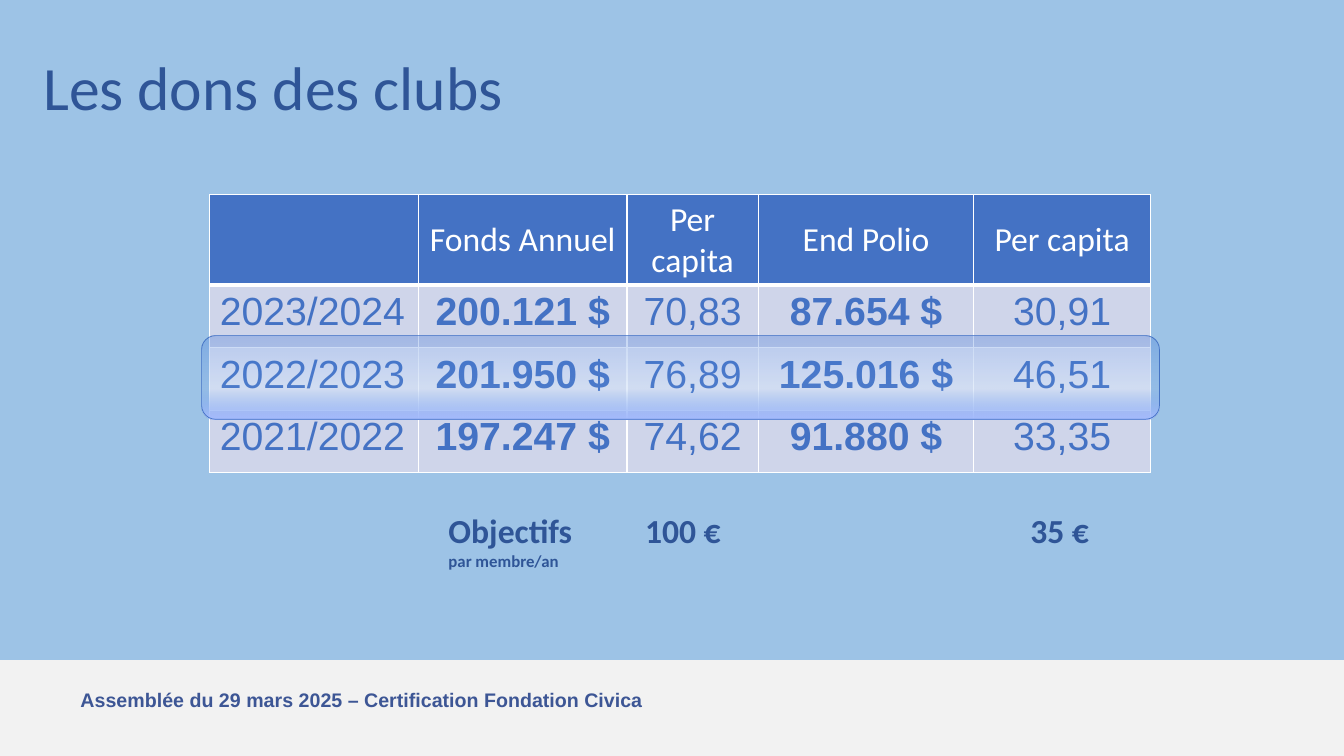
from lxml.etree import SubElement
from pptx import Presentation
from pptx.dml.color import RGBColor
from pptx.enum.shapes import MSO_SHAPE
from pptx.enum.text import MSO_ANCHOR, PP_ALIGN
from pptx.oxml.ns import qn
from pptx.util import Inches, Pt

SKY = RGBColor(0x9D, 0xC3, 0xE6)
PALE_GREY = RGBColor(0xF2, 0xF2, 0xF2)
FOOTER_BLUE = RGBColor(0x3D, 0x56, 0x95)
NAVY = RGBColor(0x2F, 0x55, 0x97)
BLUE = RGBColor(0x44, 0x72, 0xC4)
WHITE = RGBColor(0xFF, 0xFF, 0xFF)
BAND_DARK = RGBColor(0xCF, 0xD5, 0xEA)
BAND_LIGHT = RGBColor(0xE9, 0xEB, 0xF5)
GLASS_TOP = RGBColor(0x31, 0x6D, 0xD7)
GLASS_MIDDLE = RGBColor(0x70, 0xA2, 0xE8)
GLASS_BOTTOM = RGBColor(0xA6, 0xBB, 0xFF)

COLUMN_WIDTHS = [2.07, 2.07, 1.3, 2.14, 1.75]
ROW_HEIGHTS = [0.9, 0.62, 0.62, 0.62]
DONATIONS = [
    ["", "Fonds Annuel", "Per capita", "End Polio", "Per capita"],
    ["2023/2024", "200.121 $", "70,83", "87.654 $", "30,91"],
    ["2022/2023", "201.950 $", "76,89", "125.016 $", "46,51"],
    ["2021/2022", "197.247 $", "74,62", "91.880 $", "33,35"],
]


def add_run(paragraph, text, size, color, font="Calibri", bold=False):
    run = paragraph.add_run()
    run.text = text
    run.font.size = Pt(size)
    run.font.name = font
    run.font.bold = bold
    run.font.color.rgb = color


def add_label(slide, box, lines, color=NAVY, font="Calibri", bold=True):
    frame = slide.shapes.add_textbox(*map(Inches, box)).text_frame
    frame.word_wrap = True
    for index, (text, size) in enumerate(lines):
        paragraph = frame.add_paragraph() if index else frame.paragraphs[0]
        add_run(paragraph, text, size, color, font, bold)


def add_footer_band(slide):
    band = slide.shapes.add_shape(
        MSO_SHAPE.RECTANGLE, Inches(0), Inches(6.55), Inches(13.33), Inches(0.95))
    band.shadow.inherit = False
    band.fill.solid()
    band.fill.fore_color.rgb = PALE_GREY
    band.line.fill.background()


def set_borders(cell, bottom_width):
    properties = cell._tc.get_or_add_tcPr()
    for side, width in (("L", 1), ("R", 1), ("T", 1), ("B", bottom_width)):
        border = SubElement(properties, qn(f"a:ln{side}"), w=str(Pt(width)))
        fill = SubElement(border, qn("a:solidFill"))
        SubElement(fill, qn("a:srgbClr"), val=str(WHITE))


def fill_cell(cell, text, row, column):
    header = row == 0
    set_borders(cell, 3 if header else 1)
    cell.fill.solid()
    cell.fill.fore_color.rgb = BLUE if header else BAND_DARK if row % 2 else BAND_LIGHT
    cell.vertical_anchor = MSO_ANCHOR.MIDDLE if header else MSO_ANCHOR.TOP
    if not text:
        return
    paragraph = cell.text_frame.paragraphs[0]
    if header:
        paragraph.alignment = PP_ALIGN.CENTER
        add_run(paragraph, text, 24, WHITE)
    else:
        paragraph.alignment = PP_ALIGN.CENTER if column else PP_ALIGN.LEFT
        add_run(paragraph, text, 28, BLUE, "Arial", bold=column in (1, 3))


def add_donation_table(slide):
    table = slide.shapes.add_table(
        len(ROW_HEIGHTS), len(COLUMN_WIDTHS), Inches(2.08), Inches(1.93),
        Inches(sum(COLUMN_WIDTHS)), Inches(sum(ROW_HEIGHTS))).table
    for column, width in zip(table.columns, COLUMN_WIDTHS):
        column.width = Inches(width)
    for row, height in zip(table.rows, ROW_HEIGHTS):
        row.height = Inches(height)
    for row, values in enumerate(DONATIONS):
        for column, text in enumerate(values):
            fill_cell(table.cell(row, column), text, row, column)


def add_year_highlight(slide):
    highlight = slide.shapes.add_shape(
        MSO_SHAPE.ROUNDED_RECTANGLE, Inches(2), Inches(3.33), Inches(9.5), Inches(0.83))
    highlight.shadow.inherit = False
    highlight.line.color.rgb = BLUE
    highlight.line.width = Pt(0.5)
    highlight.fill.gradient()
    highlight.fill.gradient_angle = 270
    stops = highlight._element.spPr.find(qn("a:gradFill")).find(qn("a:gsLst"))
    for stop in list(stops):
        stops.remove(stop)
    for position, color, opacity in (
            (0, GLASS_TOP, 28), (63, GLASS_MIDDLE, 19), (100, GLASS_BOTTOM, 100)):
        stop = SubElement(stops, qn("a:gs"), pos=str(position * 1000))
        shade = SubElement(stop, qn("a:srgbClr"), val=str(color))
        SubElement(shade, qn("a:alpha"), val=str(opacity * 1000))


def main():
    presentation = Presentation()
    presentation.slide_width = Inches(13.33)
    presentation.slide_height = Inches(7.5)
    slide = presentation.slides.add_slide(presentation.slide_layouts[6])
    slide.background.fill.solid()
    slide.background.fill.fore_color.rgb = SKY

    add_footer_band(slide)
    add_label(slide, (0.7, 6.78, 6.24, 0.34),
              [("Assemblée du 29 mars 2025 – Certification Fondation Civica", 14)],
              FOOTER_BLUE, "Arial")
    add_label(slide, (0.33, 0.44, 7.14, 0.84), [("Les dons des clubs", 44)], bold=False)
    add_donation_table(slide)
    add_label(slide, (4.35, 5.01, 2.14, 0.71), [("Objectifs", 24), ("par membre/an", 12)])
    add_label(slide, (6.3, 5.01, 1.34, 0.5), [("100 €", 24)])
    add_label(slide, (10.12, 5.01, 0.92, 0.5), [("35 €", 24)])
    add_year_highlight(slide)
    presentation.save("out.pptx")


if __name__ == "__main__":
    main()
